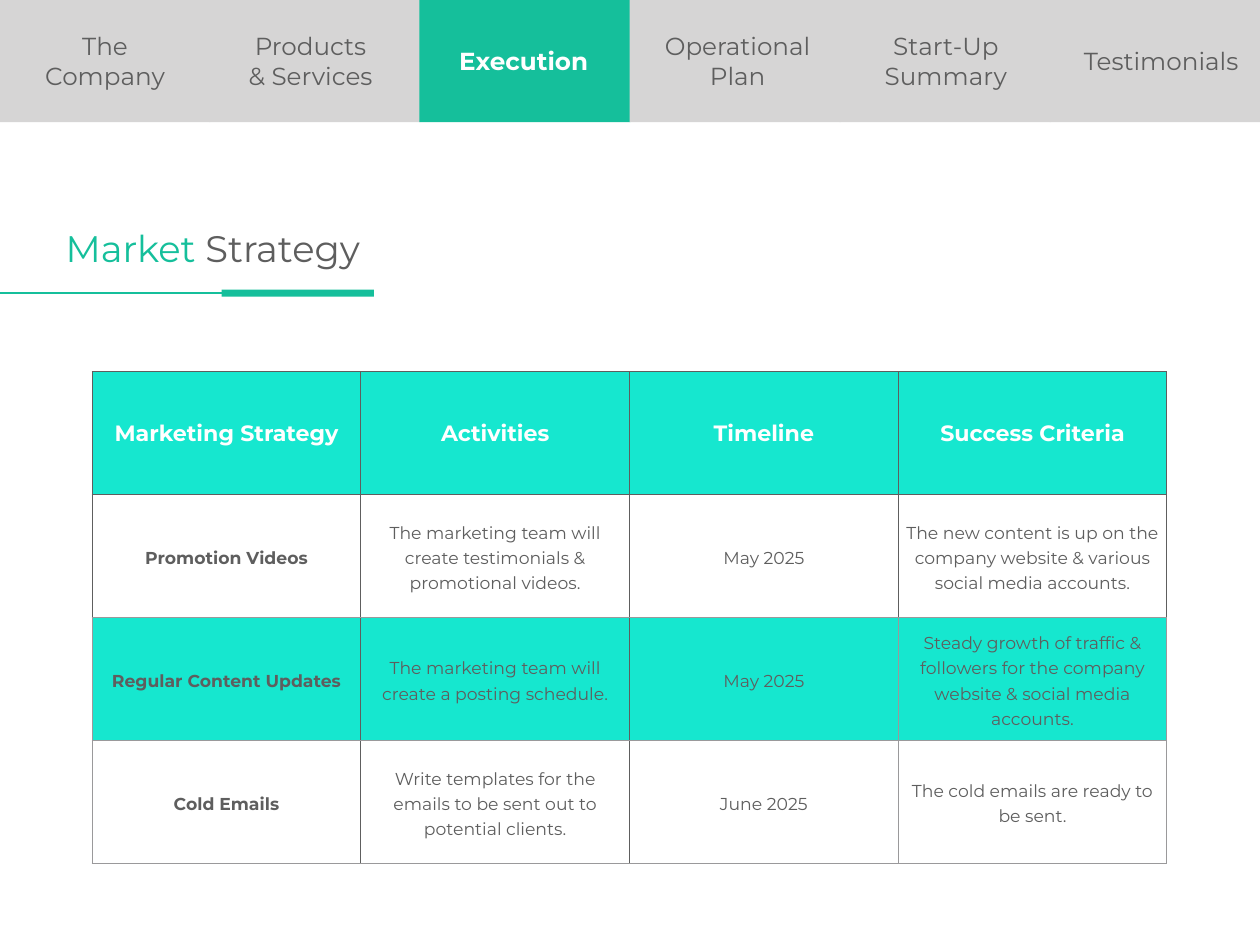
from lxml import etree
from pptx import Presentation
from pptx.dml.color import RGBColor
from pptx.enum.shapes import MSO_CONNECTOR as Connector, MSO_SHAPE as Shape
from pptx.enum.text import MSO_ANCHOR as Anchor, MSO_AUTO_SIZE as AutoSize, PP_ALIGN as Align
from pptx.oxml.ns import qn
from pptx.util import Inches, Pt

GREEN = RGBColor(0x15, 0xBF, 0x9B)
TURQUOISE = RGBColor(0x16, 0xE7, 0xCF)
DARK_GREY = RGBColor(0x5E, 0x5E, 0x5E)
MID_GREY = RGBColor(0x9A, 0x99, 0x9B)
LIGHT_GREY = RGBColor(0xD6, 0xD5, 0xD5)
WHITE = RGBColor(0xFF, 0xFF, 0xFF)
FONT = "Montserrat"
MARGIN = Inches(0.06)

# Label, left offset in the bar and width of each tab's text
TABS = [
    ("The\nCompany", 0.45, 1.49),
    ("Products\n& Services", 2.74, 1.55),
    ("Execution", 5.13, 1.58),
    ("Operational\nPlan", 7.40, 1.87),
    ("Start-Up\nSummary", 9.93, 1.51),
    ("Testimonials", 12.17, 1.89),
]
ACTIVE_TAB = "Execution"

STRATEGY_ROWS = [
    ("Marketing Strategy", "Activities", "Timeline", "Success Criteria"),
    ("Promotion Videos",
     "The marketing team will create testimonials & promotional videos.",
     "May 2025",
     "The new content is up on the company website & various social media accounts."),
    ("Regular Content Updates",
     "The marketing team will create a posting schedule.",
     "May 2025",
     "Steady growth of traffic & followers for the company website & social media accounts."),
    ("Cold Emails",
     "Write templates for the emails to be sent out to potential clients.",
     "June 2025",
     "The cold emails are ready to be sent."),
]


def style_font(font, size, color, bold=False):
    font.name, font.size, font.bold = FONT, Pt(size), bold
    font.color.rgb = color


def set_frame(frame):
    frame.margin_left = frame.margin_right = MARGIN
    frame.margin_top = frame.margin_bottom = MARGIN
    frame.vertical_anchor = Anchor.MIDDLE
    frame.auto_size = AutoSize.NONE
    frame.word_wrap = False


def add_bar(slide, left, top, width, height, color):
    bar = slide.shapes.add_shape(Shape.RECTANGLE, left, top, width, height)
    bar.shadow.inherit = False
    bar.fill.solid()
    bar.fill.fore_color.rgb = color
    bar.line.fill.background()
    return bar


def add_heading(slide, left, top, width, height):
    # Two-coloured title
    title = slide.shapes.title
    title.left, title.top, title.width, title.height = left, top, width, height
    set_frame(title.text_frame)
    paragraph = title.text_frame.paragraphs[0]
    paragraph.alignment = Align.LEFT
    for text, color in (("Market", GREEN), (" Strategy", DARK_GREY)):
        run = paragraph.add_run()
        run.text = text
        style_font(run.font, 30, color)

    # Thick accent with a thin line from the slide's edge
    accent = add_bar(slide, left + Inches(1.82), top + Inches(0.79),
                     Inches(1.72), Inches(0.08), GREEN)
    middle = accent.top + accent.height // 2
    line = slide.shapes.add_connector(Connector.STRAIGHT, 0, middle, accent.left, middle)
    line.end_connect(accent, 1)
    line.line.color.rgb = GREEN
    line.line.width = Pt(2)
    etree.SubElement(line._element.spPr, qn("a:effectLst"))


def set_borders(cell, colors):
    properties = cell._tc.get_or_add_tcPr()
    for side, color in zip("LRTB", colors):
        border = etree.SubElement(properties, qn(f"a:ln{side}"), w=str(Pt(1)))
        fill = etree.SubElement(border, qn("a:solidFill"))
        etree.SubElement(fill, qn("a:srgbClr"), val=str(color))


def add_strategy_table(slide, left, top, width, height):
    rows, columns = len(STRATEGY_ROWS), len(STRATEGY_ROWS[0])
    table = slide.shapes.add_table(rows, columns, left, top, width, height).table
    table.horz_banding = False

    def vertical(row, edge):
        return DARK_GREY if row < 2 or edge in (1, 2) else MID_GREY

    def horizontal(edge):
        return DARK_GREY if edge < 2 else MID_GREY

    for row, texts in enumerate(STRATEGY_ROWS):
        for column, text in enumerate(texts):
            cell = table.cell(row, column)
            set_borders(cell, (vertical(row, column), vertical(row, column + 1),
                               horizontal(row), horizontal(row + 1)))
            cell.fill.solid()
            cell.fill.fore_color.rgb = WHITE if row % 2 else TURQUOISE
            cell.margin_left = cell.margin_right = MARGIN
            cell.margin_top = cell.margin_bottom = MARGIN
            cell.vertical_anchor = Anchor.MIDDLE
            cell.text = text
            paragraph = cell.text_frame.paragraphs[0]
            paragraph.alignment = Align.CENTER
            if row == 0:
                style_font(paragraph.font, 18, WHITE, True)
            else:
                paragraph.line_spacing = 1.2
                style_font(paragraph.font, 14, DARK_GREY, column == 0)


def add_navigation(slide, left, top, width, height):
    # Tab backgrounds, overlapping by a hair
    pitch = width // len(TABS)
    for index, (label, _, _) in enumerate(TABS):
        color = GREEN if label == ACTIVE_TAB else LIGHT_GREY
        add_bar(slide, left + index * pitch, top, pitch + Inches(0.01), height, color)

    # Tab labels
    for label, offset, label_width in TABS:
        label_height = Inches(0.78 if "\n" in label else 0.44)
        box = slide.shapes.add_textbox(left + Inches(offset), top + (height - label_height) // 2,
                                       Inches(label_width), label_height)
        set_frame(box.text_frame)
        box.text_frame.text = label
        active = label == ACTIVE_TAB
        for paragraph in box.text_frame.paragraphs:
            paragraph.alignment = Align.CENTER
            style_font(paragraph.font, 20, WHITE if active else DARK_GREY, active)


def main():
    presentation = Presentation()
    presentation.slide_width = Inches(14.22)
    presentation.slide_height = Inches(10.67)
    slide = presentation.slides.add_slide(presentation.slide_layouts[5])
    add_heading(slide, Inches(0.68), Inches(2.48), Inches(3.72), Inches(0.63))
    add_strategy_table(slide, Inches(1.04), Inches(4.2), Inches(12.13), Inches(5.55))
    add_navigation(slide, Inches(-0.01), Inches(-0.01), Inches(14.23), Inches(1.39))
    presentation.save("out.pptx")


if __name__ == "__main__":
    main()
